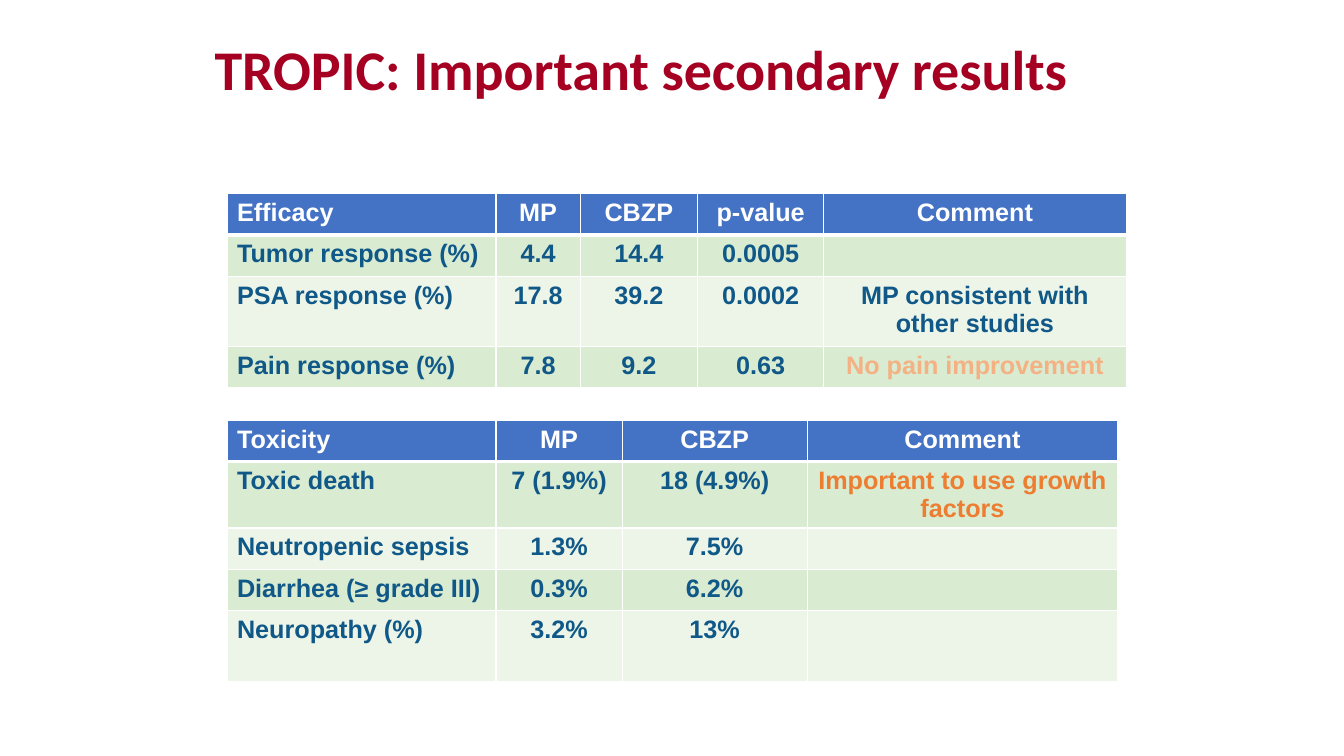
"""Build the slide of secondary TROPIC results with its efficacy and toxicity tables."""
from dataclasses import dataclass, field

from lxml import etree
from pptx import Presentation
from pptx.dml.color import RGBColor
from pptx.enum import text as t
from pptx.oxml import ns
from pptx.util import Cm, Pt

CRIMSON = RGBColor(0xA5, 0x00, 0x21)
WHITE = RGBColor(0xFF, 0xFF, 0xFF)
HEADER_BLUE = RGBColor(0x44, 0x72, 0xC4)
TEXT_BLUE = RGBColor(0x0F, 0x58, 0x87)
BAND_GREEN = RGBColor(0xD9, 0xEB, 0xD1)
PALE_GREEN = RGBColor(0xED, 0xF5, 0xE9)
ORANGE = RGBColor(0xED, 0x7D, 0x31)
PEACH = RGBColor(0xF4, 0xB1, 0x83)


@dataclass
class ResultTable:
    """Content and geometry, in centimetres, of one table of results."""
    top: float
    widths: list[float]
    heights: list[float]
    rows: list[list[str]]
    highlights: dict[str, RGBColor] = field(default_factory=dict)


RESULTS = [
    ResultTable(
        top=4.88,
        widths=[6.78, 2.12, 2.96, 3.18, 7.62],
        heights=[1.04, 1.04, 1.78, 1.02],
        rows=[
            ["Efficacy", "MP", "CBZP", "p-value", "Comment"],
            ["Tumor response (%)", "4.4", "14.4", "0.0005", ""],
            ["PSA response (%)", "17.8", "39.2", "0.0002", "MP consistent with other studies"],
            ["Pain response (%)", "7.8", "9.2", "0.63", "No pain improvement"],
        ],
        highlights={"No pain improvement": PEACH},
    ),
    ResultTable(
        top=10.59,
        widths=[6.78, 3.18, 4.66, 7.83],
        heights=[1.04, 1.04, 1.04, 1.04, 1.78],
        rows=[
            ["Toxicity", "MP", "CBZP", "Comment"],
            ["Toxic death", "7 (1.9%)", "18 (4.9%)", "Important to use growth factors"],
            ["Neutropenic sepsis", "1.3%", "7.5%", ""],
            ["Diarrhea (≥ grade III)", "0.3%", "6.2%", ""],
            ["Neuropathy (%)", "3.2%", "13%", ""],
        ],
        highlights={"Important to use growth factors": ORANGE},
    ),
]


def write(frame, wording: str, *, color: RGBColor, size: float = 18, font: str = "Arial",
          align=t.PP_ALIGN.CENTER, spacing: float = 1.0) -> None:
    """Put bold wording into a text frame with the given format."""
    paragraph = frame.paragraphs[0]
    paragraph.alignment = align
    paragraph.line_spacing = spacing
    paragraph.font.size = Pt(size)
    if wording:
        run = paragraph.add_run()
        run.text = wording
        run.font.name = font
        run.font.size = Pt(size)
        run.font.bold = True
        run.font.color.rgb = color


def draw_borders(cell, top: float, bottom: float) -> None:
    """Give a cell white borders of the given widths in points, with thin sides."""
    properties = cell._tc.get_or_add_tcPr()
    for side, width in (("lnL", 1), ("lnR", 1), ("lnT", top), ("lnB", bottom)):
        line = etree.SubElement(properties, ns.qn(f"a:{side}"), w=str(Pt(width)))
        fill = etree.SubElement(line, ns.qn("a:solidFill"))
        etree.SubElement(fill, ns.qn("a:srgbClr"), val=str(WHITE))


def draw_results(slide, results: ResultTable) -> None:
    """Draw one table with a blue header and alternating green rows."""
    table = slide.shapes.add_table(
        len(results.rows), len(results.widths), Cm(5.72), Cm(results.top),
        Cm(sum(results.widths)), Cm(sum(results.heights))).table
    for column, width in zip(table.columns, results.widths):
        column.width = Cm(width)
    for row, height in zip(table.rows, results.heights):
        row.height = Cm(height)

    for r, entries in enumerate(results.rows):
        band = HEADER_BLUE if r == 0 else BAND_GREEN if r % 2 else PALE_GREEN
        for c, entry in enumerate(entries):
            cell = table.cell(r, c)
            draw_borders(cell, top=3 if r == 1 else 1, bottom=3 if r == 0 else 1)
            cell.fill.solid()
            cell.fill.fore_color.rgb = band
            write(cell.text_frame, entry,
                  color=WHITE if r == 0 else results.highlights.get(entry, TEXT_BLUE),
                  align=t.PP_ALIGN.CENTER if c else t.PP_ALIGN.LEFT)


def main() -> None:
    """Build and save the slide."""
    deck = Presentation()
    deck.slide_width, deck.slide_height = Cm(33.87), Cm(19.05)
    slide = deck.slides.add_slide(deck.slide_layouts[5])

    title = slide.shapes.title
    title.left, title.top, title.width, title.height = Cm(1.6), Cm(0.51), Cm(29.11), Cm(2.62)
    title.text_frame.auto_size = t.MSO_AUTO_SIZE.NONE
    title.text_frame.vertical_anchor = t.MSO_ANCHOR.MIDDLE
    write(title.text_frame, "TROPIC: Important secondary results",
          color=CRIMSON, size=40, font="Calibri", spacing=0.9)

    for results in RESULTS:
        draw_results(slide, results)
    deck.save("out.pptx")


if __name__ == "__main__":
    main()
